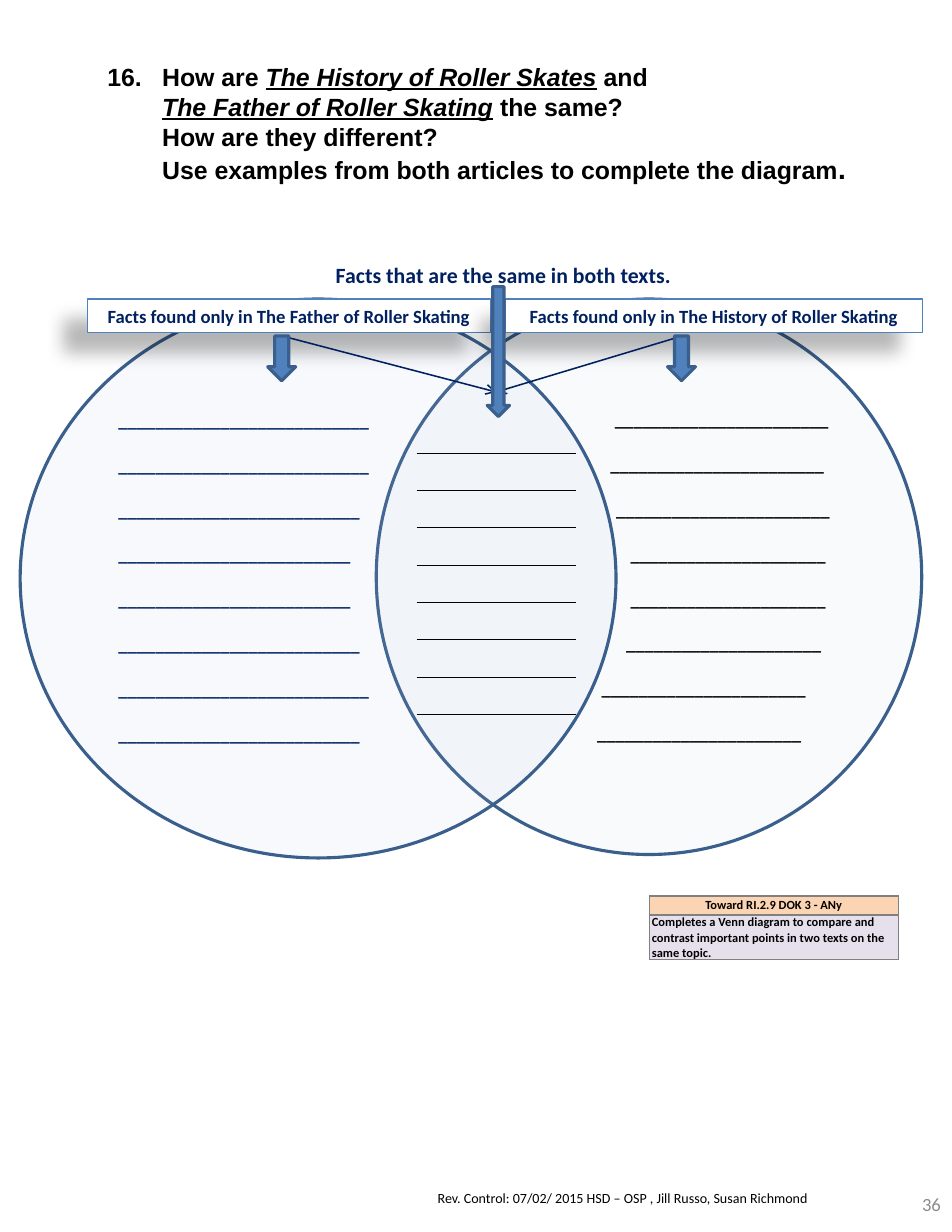
"""Build a Venn diagram worksheet comparing two articles about roller skating."""
from dataclasses import dataclass
from typing import Optional

from lxml.etree import SubElement
from pptx import Presentation
from pptx.dml.color import RGBColor
from pptx.enum.shapes import MSO_CONNECTOR as Connector, MSO_SHAPE as Preset
from pptx.enum.text import MSO_ANCHOR as Anchor, PP_ALIGN as Align
from pptx.oxml.ns import qn
from pptx.util import Emu, Pt

EMU_PER_PX = 9144
BLACK = RGBColor(0x00, 0x00, 0x00)
WHITE = RGBColor(0xFF, 0xFF, 0xFF)
GRAY = RGBColor(0x8C, 0x8C, 0x8C)
NAVY = RGBColor(0x00, 0x20, 0x60)
BLUE = RGBColor(0x4F, 0x81, 0xBD)
OUTLINE = RGBColor(0x3A, 0x5F, 0x8C)
PALE_BLUE = RGBColor(0xAB, 0xC3, 0xDF)
PEACH = RGBColor(0xFB, 0xD4, 0xB4)
LAVENDER = RGBColor(0xE6, 0xE0, 0xEC)


@dataclass(frozen=True)
class Box:
    left: int
    top: int
    width: int
    height: int

    def emu(self) -> tuple:
        return tuple(px(v) for v in (self.left, self.top, self.width, self.height))


@dataclass(frozen=True)
class Circle:
    box: Box
    opacity: int
    color: RGBColor
    lengths: tuple
    indents: tuple


@dataclass(frozen=True)
class Label:
    box: Box
    text: str


CIRCLES = (
    Circle(Box(336, 267, 487, 496), 8, BLACK,
           (23, 23, 23, 21, 21, 21, 22, 22),
           (132, 128, 133, 146, 146, 142, 120, 116)),
    Circle(Box(18, 267, 532, 499), 9, NAVY,
           (27, 27, 26, 25, 25, 26, 27, 26), (0,) * 8),
)
LABELS = (
    Label(Box(78, 267, 360, 30), "Facts found only in The Father of Roller Skating"),
    Label(Box(451, 267, 373, 30), "Facts found only in The History of Roller Skating"),
)
DOWN_ARROWS = (Box(596, 300, 25, 40), Box(239, 300, 25, 40), Box(435, 256, 20, 116))
QUESTION = (
    (("16.\tHow are ", False), ("The History of Roller Skates", True), (" and", False)),
    (("The Father of Roller Skating", True), (" the same?", False)),
    (("How are they different?", False),),
    (("Use examples from both articles to complete the diagram", False),),
)
STANDARD = (
    (17, PEACH, Align.CENTER, Anchor.MIDDLE, "Toward RI.2.9 DOK 3 - ANy"),
    (40, LAVENDER, Align.LEFT, Anchor.TOP,
     "Completes a Venn diagram to compare and contrast important points "
     "in two texts on the same topic."),
)


def px(value: int) -> Emu:
    return Emu(value * EMU_PER_PX)


def write(paragraph, text: str, size: int = 12, color: RGBColor = BLACK,
          font: str = "Calibri", bold: bool = True, title: bool = False,
          align: Optional[Align] = None) -> None:
    run = paragraph.add_run()
    run.text = text
    run.font.name, run.font.size, run.font.bold = font, Pt(size), bold
    run.font.color.rgb = color
    if title:
        run.font.italic = run.font.underline = True
    if align is not None:
        paragraph.alignment = align


def indent(paragraph, left: int, first: int = 0) -> None:
    properties = paragraph._p.get_or_add_pPr()
    properties.set("marL", str(px(left)))
    properties.set("indent", str(px(first)))


def add_text(slide, box: Box, text: str, anchor: Anchor = Anchor.TOP, **style):
    frame = slide.shapes.add_textbox(*box.emu()).text_frame
    frame.word_wrap, frame.vertical_anchor = True, anchor
    write(frame.paragraphs[0], text, **style)


def add_preset(slide, preset: Preset, box: Box, fill: RGBColor,
               line: RGBColor = OUTLINE, width: float = 2):
    shape = slide.shapes.add_shape(preset, *box.emu())
    shape.shadow.inherit = False
    shape.fill.solid()
    shape.fill.fore_color.rgb = fill
    shape.line.color.rgb, shape.line.width = line, Pt(width)
    shape.text_frame.vertical_anchor = Anchor.TOP
    return shape


def add_circle(slide, circle: Circle) -> None:
    shape = add_preset(slide, Preset.OVAL, circle.box, PALE_BLUE)
    color = shape._element.spPr.find(qn("a:solidFill"))[0]
    SubElement(color, qn("a:alpha"), val=str(circle.opacity * 1000))
    frame = shape.text_frame
    frame.margin_top = px(25)
    for row, (length, left) in enumerate(zip(circle.lengths, circle.indents)):
        paragraph = frame.add_paragraph() if row else frame.paragraphs[0]
        paragraph.space_after = Pt(14.4)
        indent(paragraph, left)
        write(paragraph, "_" * length, color=circle.color, align=Align.LEFT)


def add_label(slide, label: Label) -> None:
    shape = add_preset(slide, Preset.RECTANGLE, label.box, WHITE, BLUE, 0.75)
    effects = shape._element.spPr.find(qn("a:effectLst"))
    shadow = SubElement(effects, qn("a:outerShdw"), blurRad=str(Pt(11.8)),
                        dist=str(Pt(19.7)), dir=str(141 * 60000), rotWithShape="0")
    color = SubElement(shadow, qn("a:srgbClr"), val=str(BLACK))
    SubElement(color, qn("a:alpha"), val="28000")
    write(shape.text_frame.paragraphs[0], label.text, color=NAVY, align=Align.CENTER)


def add_line(slide, start: tuple, end: tuple, color: RGBColor, arrow: bool = False):
    line = slide.shapes.add_connector(Connector.STRAIGHT, *map(px, start + end))
    line.line.color.rgb, line.line.width = color, Pt(1)
    if arrow:
        SubElement(line.line._get_or_add_ln(), qn("a:tailEnd"), type="arrow")
    SubElement(line._element.spPr, qn("a:effectLst"))


def add_question(slide) -> None:
    frame = slide.shapes.add_textbox(*Box(80, 50, 717, 121).emu()).text_frame
    frame.word_wrap = True
    for row, parts in enumerate(QUESTION):
        paragraph = frame.add_paragraph() if row else frame.paragraphs[0]
        indent(paragraph, 55, 0 if row else -49)
        for text, title in parts:
            write(paragraph, text, size=16, font="Arial", title=title)
    write(frame.paragraphs[-1], ".", size=18, font="Arial")


def add_standard(slide) -> None:
    table = slide.shapes.add_table(2, 1, *Box(580, 800, 222, 57).emu()).table
    for row, (height, fill, align, anchor, text) in enumerate(STANDARD):
        table.rows[row].height = px(height)
        cell = table.cell(row, 0)
        cell.margin_left = cell.margin_right = px(2)
        cell.margin_top = cell.margin_bottom = 0
        cell.vertical_anchor = anchor
        write(cell.text_frame.paragraphs[0], text, size=8, align=align)
        properties = cell._tc.get_or_add_tcPr()
        for side in ("a:lnL", "a:lnR", "a:lnT", "a:lnB"):
            border = SubElement(properties, qn(side), w=str(Pt(1)))
            SubElement(SubElement(border, qn("a:solidFill")), qn("a:srgbClr"), val="808080")
        cell.fill.solid()
        cell.fill.fore_color.rgb = fill


def main() -> None:
    presentation = Presentation()
    presentation.slide_width, presentation.slide_height = px(850), px(1100)
    slide = presentation.slides.add_slide(presentation.slide_layouts[6])
    add_text(slide, Box(381, 1057, 425, 26),
             "Rev. Control: 07/02/ 2015 HSD – OSP , Jill Russo, Susan Richmond",
             size=9, bold=False)
    add_text(slide, Box(783, 1050, 67, 50), "36", Anchor.MIDDLE,
             color=GRAY, bold=False, align=Align.RIGHT)
    add_question(slide)
    for circle in CIRCLES:
        add_circle(slide, circle)
    for label in LABELS:
        add_label(slide, label)
    for start in ((252, 300), (609, 300)):
        add_line(slide, start, (443, 350), NAVY, arrow=True)
    for box in DOWN_ARROWS:
        add_preset(slide, Preset.DOWN_ARROW, box, BLUE)
    add_text(slide, Box(264, 229, 371, 34), "Facts that are the same in both texts.",
             size=14, color=NAVY, align=Align.CENTER)
    for row in range(8):
        height = 405 + row * 100 // 3
        add_line(slide, (372, height), (514, height), BLACK)
    add_standard(slide)
    presentation.save("out.pptx")


if __name__ == "__main__":
    main()
